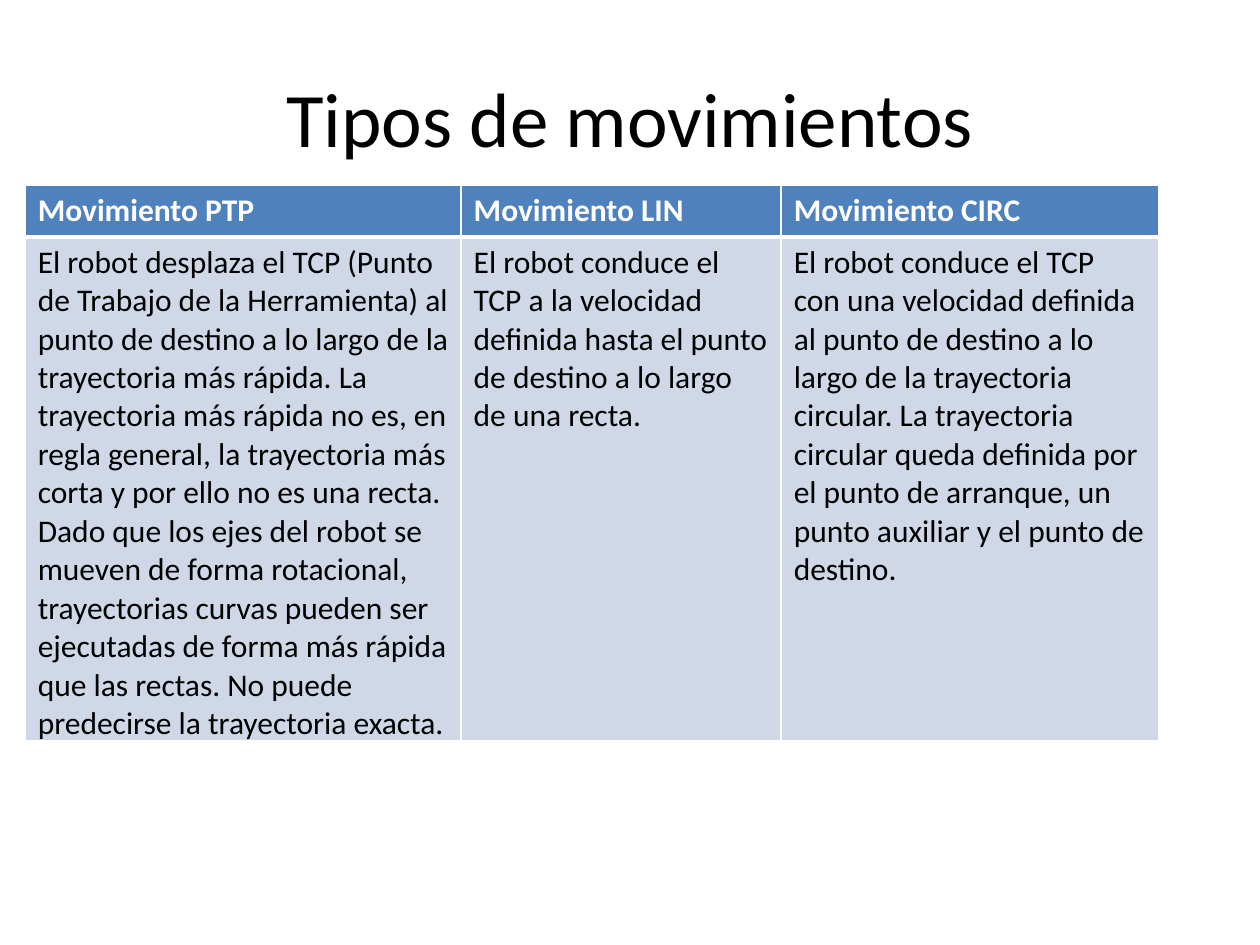
from lxml import etree
from pptx import Presentation
from pptx.dml.color import RGBColor
from pptx.enum.text import MSO_ANCHOR, PP_ALIGN
from pptx.oxml.ns import qn
from pptx.util import Inches, Pt

CENTER, LEFT = PP_ALIGN.CENTER, PP_ALIGN.LEFT
MIDDLE = MSO_ANCHOR.MIDDLE

TITLE = "Tipos de movimientos"
MOVEMENTS = [
    ("Movimiento PTP", 3.46,
     "El robot desplaza el TCP (Punto de Trabajo de la Herramienta) al punto de destino "
     "a lo largo de la trayectoria más rápida. La trayectoria más rápida no es, en regla "
     "general, la trayectoria más corta y por ello no es una recta. Dado que los ejes del "
     "robot se mueven de forma rotacional, trayectorias curvas pueden ser ejecutadas de "
     "forma más rápida que las rectas. No puede predecirse la trayectoria exacta."),
    ("Movimiento LIN", 2.54,
     "El robot conduce el TCP a la velocidad definida hasta el punto de destino a lo "
     "largo de una recta."),
    ("Movimiento CIRC", 3,
     "El robot conduce el TCP con una velocidad definida al punto de destino a lo largo "
     "de la trayectoria circular. La trayectoria circular queda definida por el punto de "
     "arranque, un punto auxiliar y el punto de destino."),
]
ROW_HEIGHTS = [0.41, 4]
HEADER = {"fill": "4F81BD", "color": "FFFFFF", "bold": True, "top": 1, "bottom": 3}
BODY = {"fill": "D0D8E8", "color": "000000", "bold": False, "top": 3, "bottom": 1}


def rgb(value):
    """Turn a hex string into a colour."""
    return RGBColor.from_string(value)


def write(tf, text, size=18, color="000000", bold=False, align=LEFT):
    """Write one formatted paragraph into a text frame."""
    tf.word_wrap = True
    p = tf.paragraphs[0]
    p.alignment = align
    r = p.add_run()
    r.text = text
    r.font.name, r.font.size, r.font.bold = "Calibri", Pt(size), bold
    r.font.color.rgb = rgb(color)


def border(cell, side, width, color="FFFFFF"):
    """Draw one side of a cell's border."""
    tc_pr = cell._tc.get_or_add_tcPr()
    line = etree.SubElement(tc_pr, qn(f"a:ln{side}"), w=str(Pt(width)))
    fill = etree.SubElement(line, qn("a:solidFill"))
    etree.SubElement(fill, qn("a:srgbClr"), val=color)


def fill_cell(cell, text, fill, color, bold, top, bottom):
    """Give a cell its borders, fill and text."""
    for side, width in (("L", 1), ("R", 1), ("T", top), ("B", bottom)):
        border(cell, side, width)
    cell.fill.solid()
    cell.fill.fore_color.rgb = rgb(fill)
    write(cell.text_frame, text, color=color, bold=bold)


def main():
    """Build the slide with its title and table of movements."""
    prs = Presentation()
    prs.slide_width, prs.slide_height = Inches(10), Inches(7.5)
    s = prs.slides.add_slide(prs.slide_layouts[6])

    title = s.shapes.add_textbox(Inches(0.5), Inches(0.3), Inches(9), Inches(1.25))
    title.text_frame.vertical_anchor = MIDDLE
    write(title.text_frame, TITLE, size=44, align=CENTER)

    width = sum(column_width for _, column_width, _ in MOVEMENTS)
    table = s.shapes.add_table(
        len(ROW_HEIGHTS), len(MOVEMENTS), Inches(0.2), Inches(1.47),
        Inches(width), Inches(sum(ROW_HEIGHTS))).table
    for row, height in zip(table.rows, ROW_HEIGHTS):
        row.height = Inches(height)
    for i, (name, column_width, description) in enumerate(MOVEMENTS):
        table.columns[i].width = Inches(column_width)
        fill_cell(table.cell(0, i), name, **HEADER)
        fill_cell(table.cell(1, i), description, **BODY)

    prs.save("out.pptx")


if __name__ == "__main__":
    main()
